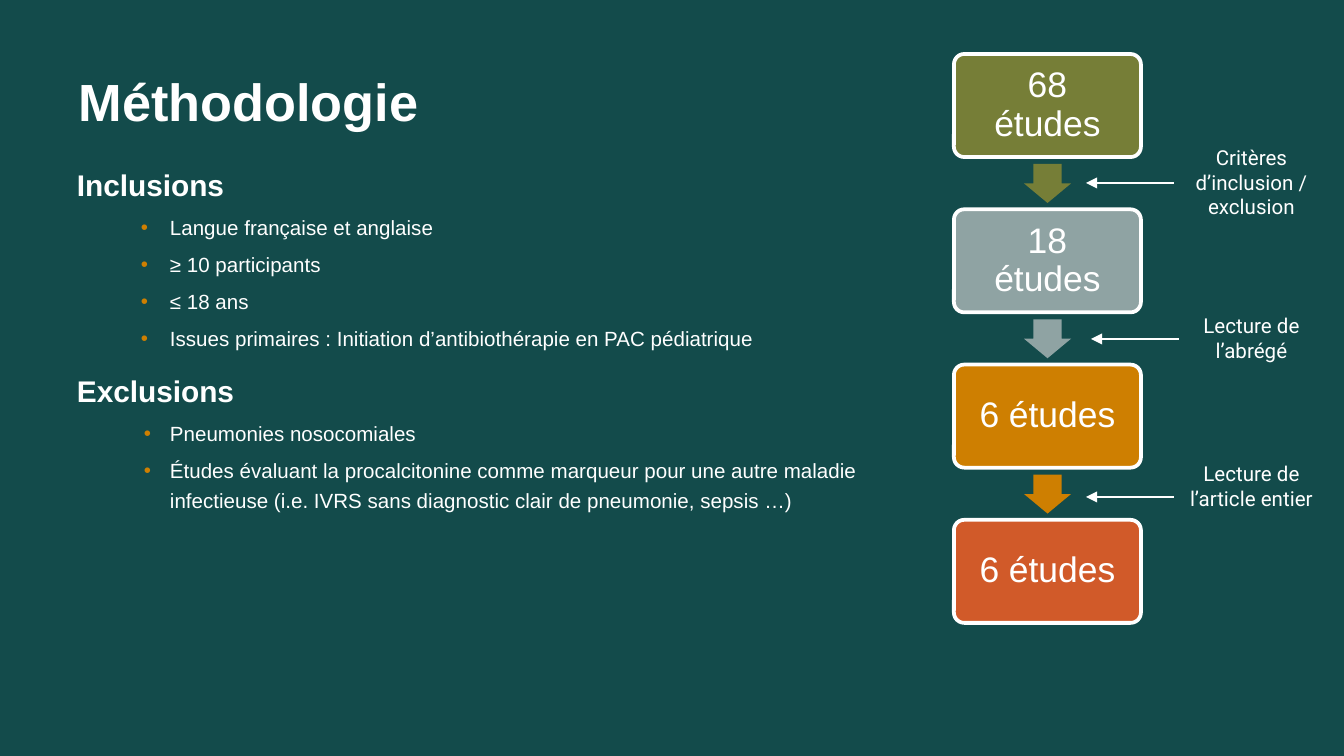
from lxml import etree
from pptx import Presentation
from pptx.dml.color import RGBColor
from pptx.enum.shapes import MSO_CONNECTOR, MSO_SHAPE
from pptx.enum.text import MSO_ANCHOR, PP_ALIGN
from pptx.oxml.ns import qn
from pptx.util import Emu, Pt

SLIDE_WIDTH, SLIDE_HEIGHT = 1344, 756
EMU_PER_PX = 9144000 / SLIDE_WIDTH

ROUNDED = MSO_SHAPE.ROUNDED_RECTANGLE
RIGHT_ARROW = MSO_SHAPE.RIGHT_ARROW
STRAIGHT = MSO_CONNECTOR.STRAIGHT
CENTER = PP_ALIGN.CENTER
MIDDLE = MSO_ANCHOR.MIDDLE

TEAL = RGBColor(0x13, 0x4B, 0x4B)
WHITE = RGBColor(0xFF, 0xFF, 0xFF)
OLIVE = RGBColor(0x76, 0x7E, 0x37)
GREY = RGBColor(0x8F, 0xA3, 0xA3)
AMBER = RGBColor(0xCE, 0x7F, 0x01)
RUST = RGBColor(0xD1, 0x5A, 0x29)

# heading, space before, bullet hanging indent, bullets
CRITERIA = [
    ("Inclusions", 4, 29, [
        "Langue française et anglaise",
        "≥ 10 participants",
        "≤ 18 ans",
        "Issues primaires : Initiation d’antibiothérapie en PAC pédiatrique",
    ]),
    ("Exclusions", 8, 26, [
        "Pneumonies nosocomiales",
        "Études évaluant la procalcitonine comme marqueur pour une autre maladie "
        "infectieuse (i.e. IVRS sans diagnostic clair de pneumonie, sepsis …)",
    ]),
]
STAGES = [("68 études", OLIVE), ("18 études", GREY), ("6 études", AMBER), ("6 études", RUST)]
STAGE_TOP, STAGE_PITCH = 54, 155.3
# text, label top, label height, pointer start x, pointer y
FILTERS = [
    ("Critères d’inclusion / exclusion", 138, 89, 1174, 183),
    ("Lecture de l’abrégé", 306, 63, 1179, 339),
    ("Lecture de l’article entier", 454, 63, 1174, 497),
]
POINTER_LENGTH = 88


def px(value):
    return Emu(round(value * EMU_PER_PX))


def set_margins(frame, horizontal, vertical):
    frame.margin_left = frame.margin_right = px(horizontal)
    frame.margin_top = frame.margin_bottom = px(vertical)


def write(para, text, size, font="Arial", bold=False):
    para.text = text
    for span in para.runs:
        span.font.name = font
        span.font.size = Pt(size)
        span.font.bold = bold
        span.font.color.rgb = WHITE


def add_text_frame(page, left, top, width, height, margins=(0, 0)):
    box = page.shapes.add_textbox(px(left), px(top), px(width), px(height))
    frame = box.text_frame
    frame.word_wrap = True
    set_margins(frame, *margins)
    return frame


def add_bullet(para, hanging):
    properties = para._p.get_or_add_pPr()
    properties.set("marL", str(px(93)))
    properties.set("indent", str(-px(hanging)))
    color = etree.SubElement(properties, qn("a:buClr"))
    etree.SubElement(color, qn("a:srgbClr"), val=str(AMBER))
    etree.SubElement(properties, qn("a:buFont"), typeface="Arial")
    etree.SubElement(properties, qn("a:buChar"), char="•")


def add_criteria(page):
    frame = add_text_frame(page, 77, 160, 814, 414)
    para = frame.paragraphs[0]
    for heading, space, hanging, bullets in CRITERIA:
        if para.text:
            para = frame.add_paragraph()
        write(para, heading, 16, bold=True)
        para.space_before = Pt(space)
        para.line_spacing = 1.2
        for text in bullets:
            para = frame.add_paragraph()
            write(para, text, 11)
            para.level = 1
            para.space_before = Pt(4)
            para.line_spacing = 1.2
            add_bullet(para, hanging)


def add_filled_shape(page, kind, left, top, width, height, color):
    shape = page.shapes.add_shape(kind, px(left), px(top), px(width), px(height))
    shape.shadow.inherit = False
    shape.fill.solid()
    shape.fill.fore_color.rgb = color
    shape.line.fill.background()
    return shape


def add_stage(page, top, text, color):
    box = add_filled_shape(page, ROUNDED, 954, top, 187, 103, color)
    box.adjustments[0] = 0.1
    box.line.color.rgb = WHITE
    box.line.width = Pt(2)
    frame = box.text_frame
    frame.word_wrap = True
    frame.vertical_anchor = MIDDLE
    set_margins(frame, 13, 13)
    para = frame.paragraphs[0]
    write(para, text, 19)
    para.alignment = CENTER
    para.line_spacing = 0.9


def add_stage_arrow(page, top, color):
    arrow = add_filled_shape(page, RIGHT_ARROW, 1028, top, 39, 47, color)
    arrow.adjustments[0] = 0.6
    arrow.adjustments[1] = 0.5
    arrow.rotation = 90


def add_pointer(page, start, y):
    pointer = page.shapes.add_connector(
        STRAIGHT, px(start), px(y), px(start - POINTER_LENGTH), px(y))
    pointer.line.color.rgb = WHITE
    pointer.line.width = Pt(0.75)
    etree.SubElement(pointer.line._get_or_add_ln(), qn("a:tailEnd"), type="triangle")
    etree.SubElement(pointer._element.spPr, qn("a:effectLst"))


def add_filter(page, text, top, height, start, y):
    frame = add_text_frame(page, 1164, top, 175, height, margins=(13, 7))
    para = frame.paragraphs[0]
    write(para, text, 11, font="Roboto")
    para.alignment = CENTER
    add_pointer(page, start, y)


def main():
    deck = Presentation()
    deck.slide_width = px(SLIDE_WIDTH)
    deck.slide_height = px(SLIDE_HEIGHT)
    page = deck.slides.add_slide(deck.slide_layouts[6])
    page.background.fill.solid()
    page.background.fill.fore_color.rgb = TEAL

    title = add_text_frame(page, 79, 69, 1183, 163)
    write(title.paragraphs[0], "Méthodologie", 28, bold=True)
    add_criteria(page)

    for index, (text, color) in enumerate(STAGES):
        top = STAGE_TOP + index * STAGE_PITCH
        add_stage(page, top, text, color)
        if index < len(STAGES) - 1:
            add_stage_arrow(page, top + 106, color)
    for step in FILTERS:
        add_filter(page, *step)

    deck.save("out.pptx")


if __name__ == "__main__":
    main()
